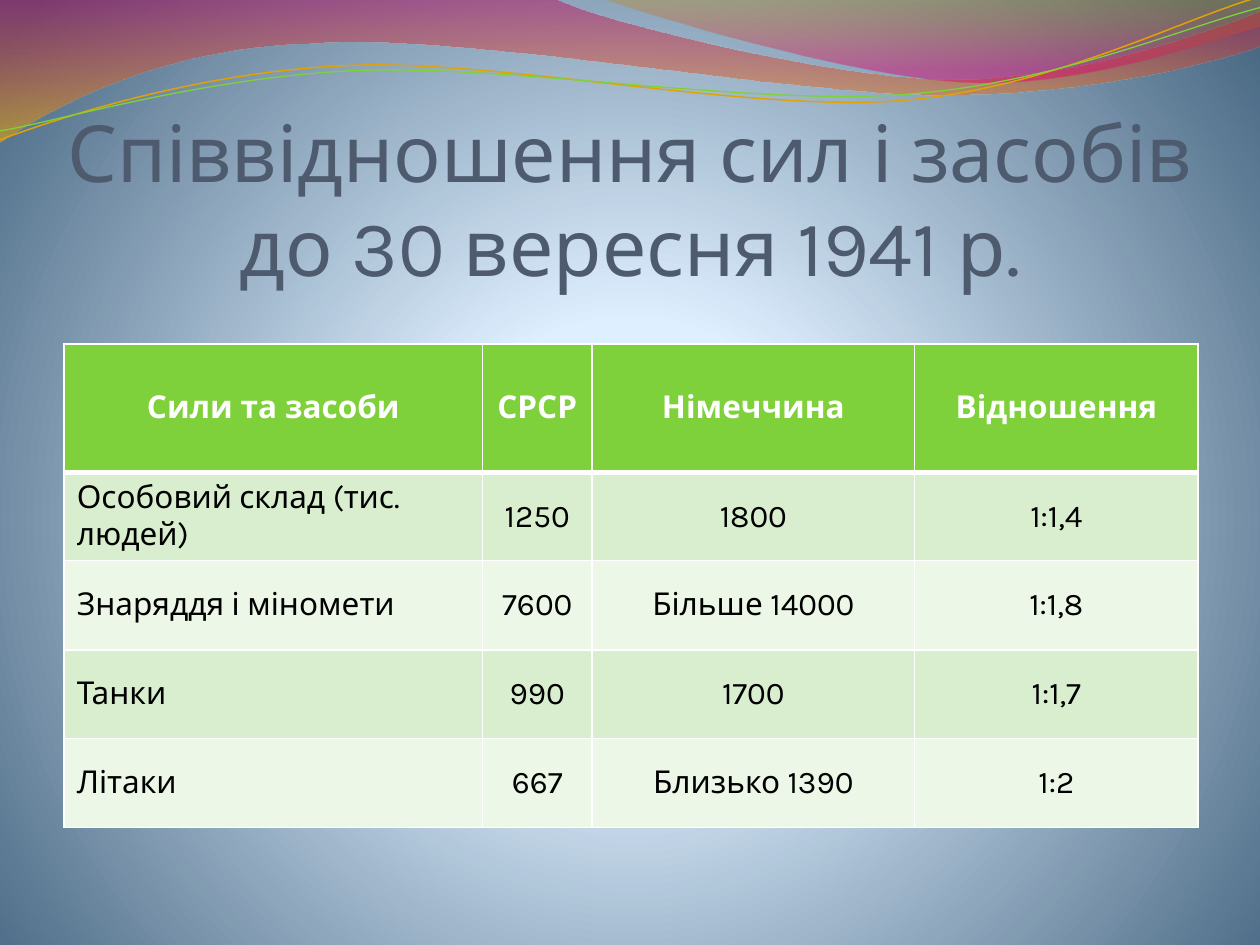
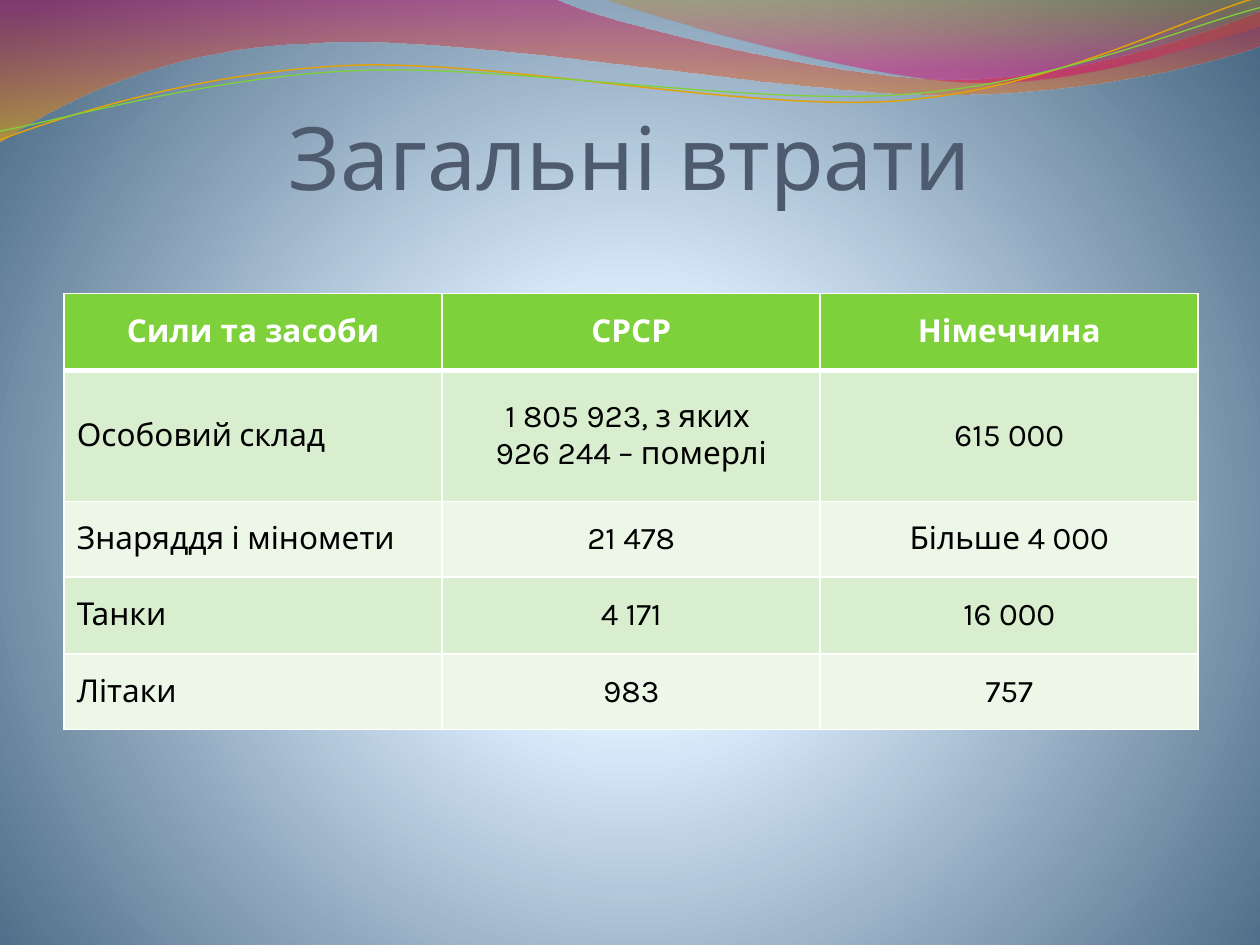
import math

from lxml import etree
from pptx import Presentation
from pptx import util as u
from pptx.dml.color import RGBColor
from pptx.enum import text
from pptx.oxml import ns

FONT = "Karla"
COLORS = {
    "title": "4E5B6F", "header": "7FD13B", "odd row": "D8EECE", "even row": "ECF7E8",
    "white": "FFFFFF", "black": "000000", "gold": "E0A209",
}
# Gradient stops: position %, colour, opacity %
BACKDROP = [(0, "DFF0FF", 100), (25, "DEEFFF", 100), (100, "4A6984", 100)]
RADIAL = {"l": 10, "t": 110, "r": 10, "b": 100}

# Each outline is a start point, then steps: 2 numbers for a line, 6 for a cubic curve.
# Boxes are left, top, width, height.
RIBBONS = [
    ([(0, "BD0059", 45), (100, "F0AB00", 55)], (-0.01, -0.01, 10.02, 1.14),
     [(0, 0), (4.4, -0.01), (4.76, 0.17, 6.64, 0.63, 7.58, 0.63),
      (8.53, 0.63, 9.58, 0.26, 10, 0.09), (10.01, 0.36),
      (9.83, 0.44, 8.7, 0.76, 7.46, 0.75), (6.22, 0.75, 3.82, 0.28, 2.57, 0.34),
      (1.29, 0.36, 0.46, 0.83, -0.01, 1.13), (0, 0)]),
    ([(0, "C38B00", 30), (80, "E1006B", 45)], (4.79, -0.01, 5.21, 0.7),
     [(4.79, -0.01), (5.09, 0.11, 6.82, 0.62, 7.69, 0.65),
      (8.56, 0.69, 9.61, 0.32, 10, 0.21), (10, 0), (4.79, -0.01)]),
]
STRAND_TILT = 357.3
STRANDS = [
    ("gold", 0.85, (-0.02, 0.22, 10.02, 0.71),
     [(0, 1.11), (0.48, 0.93, 1.58, 0.57, 2.77, 0.52), (3.95, 0.47, 5.93, 0.89, 7.13, 0.8),
      (8.33, 0.71, 9.38, 0.15, 9.98, -0.02)]),
    ("header", 0.75, (-0.02, 0.3, 10.03, 0.58),
     [(0, 1.04), (0.47, 0.96, 1.64, 0.61, 2.83, 0.56), (4.03, 0.51, 5.97, 0.84, 7.17, 0.75),
      (8.36, 0.67, 9.41, 0.21, 10, 0.06)]),
]
SLIDES = [
    {"title": "Співвідношення сил і засобів до 30 вересня 1941 р.",
     "size": 45, "title height": 1.41, "table top": 2.73,
     "columns": [3.32, 0.87, 2.56, 2.25], "heights": [1.02, 0.7, 0.71, 0.7, 0.71],
     "rows": [
         ("Сили та засоби", "СРСР", "Німеччина", "Відношення"),
         ("Особовий склад (тис. людей)", "1250", "1800", "1:1,4"),
         ("Знаряддя і міномети", "7600", "Більше 14000", "1:1,8"),
         ("Танки", "990", "1700", "1:1,7"),
         ("Літаки", "667", "Близько 1390", "1:2")]},
    {"title": "Загальні втрати",
     "size": 50, "title height": 1.25, "table top": 2.33,
     "columns": [3, 3, 3], "heights": [0.61, 1.04, 0.6, 0.61, 0.6],
     "rows": [
         ("Сили та засоби", "СРСР", "Німеччина"),
         ("Особовий склад", "1 805 923, з яких \n926 244 – померлі", "615 000"),
         ("Знаряддя і міномети", "21 478", "Більше 4 000"),
         ("Танки", "4 171", "16 000"),
         ("Літаки", "983", "757")]},
]


def rgb(name):
    return RGBColor.from_string(COLORS[name])


def add_element(parent, tag, **attributes):
    values = {key: str(value) for key, value in attributes.items()}
    return etree.SubElement(parent, ns.qn(tag), values)


def set_gradient(fill, owner, stops, center=None):
    """Fill with a top-to-bottom gradient, or a radial one around center."""
    fill.solid()
    solid = owner.find(".//" + ns.qn("a:solidFill"))
    gradient = etree.Element(ns.qn("a:gradFill"), rotWithShape="1")
    stop_list = add_element(gradient, "a:gsLst")
    for position, color, opacity in stops:
        stop = add_element(stop_list, "a:gs", pos=position * 1000)
        shade = add_element(stop, "a:srgbClr", val=color)
        if opacity < 100:
            add_element(shade, "a:alpha", val=opacity * 1000)
    if center:
        radial = add_element(gradient, "a:path", path="circle")
        add_element(radial, "a:fillToRect", **{side: v * 1000 for side, v in center.items()})
    else:
        add_element(gradient, "a:lin", ang=90 * 60000, scaled=1)
    solid.getparent().replace(solid, gradient)


def place_in_box(x, y, box, tilt):
    """Turn a slide point into a point of the box before it is tilted."""
    left, top, width, height = box
    angle = math.radians(-tilt)
    dx, dy = x - left - width / 2, y - top - height / 2
    return (u.Inches(width / 2 + dx * math.cos(angle) - dy * math.sin(angle)),
            u.Inches(height / 2 + dx * math.sin(angle) + dy * math.cos(angle)))


def add_outline(slide, layout, box, outline, tilt=0):
    """Draw a curved freeform and hand it to the layout, so that every slide shows it."""
    steps = [[place_in_box(*step[i:i + 2], box, tilt) for i in range(0, len(step), 2)]
             for step in outline]
    builder = slide.shapes.build_freeform(*steps[0][0])
    builder.add_line_segments([step[-1] for step in steps[1:]],
                              close=outline[0] == outline[-1])
    shape = builder.convert_to_shape()
    shape.shadow.inherit = False
    shape.left, shape.top, shape.width, shape.height = map(u.Inches, box)
    shape.rotation = tilt

    route = shape.element.find(".//" + ns.qn("a:path"))
    route.set("w", str(shape.width))
    route.set("h", str(shape.height))
    for segment, points in zip(list(route), steps):
        if len(points) == 3:
            curve = etree.Element(ns.qn("a:cubicBezTo"))
            route.replace(segment, curve)
            segment = curve
        for point in list(segment):
            segment.remove(point)
        for x, y in points:
            add_element(segment, "a:pt", x=int(x), y=int(y))
    layout.shapes.element.append(shape.element)
    return shape


def add_waves(slide, layout):
    for stops, box, outline in RIBBONS:
        ribbon = add_outline(slide, layout, box, outline)
        ribbon.line.fill.background()
        set_gradient(ribbon.fill, ribbon.element, stops)
    for color, width, box, outline in STRANDS:
        strand = add_outline(slide, layout, box, outline, STRAND_TILT)
        strand.fill.background()
        strand.line.color.rgb = rgb(color)
        strand.line.width = u.Pt(width)


def set_title(slide, content):
    box = slide.shapes.title
    box.left, box.top = u.Inches(0.5), u.Inches(0.77)
    box.width, box.height = u.Inches(9), u.Inches(content["title height"])
    frame = box.text_frame
    frame.text = content["title"]
    frame.auto_size = text.MSO_AUTO_SIZE.NONE
    frame.vertical_anchor = text.MSO_ANCHOR.TOP
    frame.margin_left = frame.margin_right = frame.margin_bottom = 0
    frame.margin_top = u.Inches(0.05)
    para = frame.paragraphs[0]
    para.alignment = text.PP_ALIGN.CENTER
    para.font.name, para.font.size = FONT, u.Pt(content["size"])
    para.font.color.rgb = rgb("title")


def set_borders(cell, row):
    thick = {0: "B", 1: "T"}.get(row)
    properties = cell._tc.get_or_add_tcPr()
    for side in "LRTB":
        width = u.Pt(3 if side == thick else 1)
        line = add_element(properties, "a:ln" + side, w=width)
        add_element(add_element(line, "a:solidFill"), "a:srgbClr", val=COLORS["white"])


def fill_cell(cell, words, row, column):
    set_borders(cell, row)
    cell.fill.solid()
    cell.fill.fore_color.rgb = rgb("header" if row == 0 else "odd row" if row % 2 else "even row")
    cell.vertical_anchor = text.MSO_ANCHOR.MIDDLE
    cell.text_frame.text = words
    for para in cell.text_frame.paragraphs:
        centred = row == 0 or column > 0
        para.alignment = text.PP_ALIGN.CENTER if centred else text.PP_ALIGN.LEFT
        para.font.name, para.font.size = FONT, u.Pt(18)
        para.font.bold = row == 0
        para.font.color.rgb = rgb("white" if row == 0 else "black")


def add_forces_table(slide, content):
    rows, columns, heights = content["rows"], content["columns"], content["heights"]
    table = slide.shapes.add_table(
        len(rows), len(columns), u.Inches(0.51), u.Inches(content["table top"]),
        u.Inches(sum(columns)), u.Inches(sum(heights))).table
    for column, width in zip(table.columns, columns):
        column.width = u.Inches(width)
    for row, height in zip(table.rows, heights):
        row.height = u.Inches(height)
    for r, row in enumerate(rows):
        for c, words in enumerate(row):
            fill_cell(table.cell(r, c), words, r, c)


def main():
    deck = Presentation()
    deck.slide_width, deck.slide_height = u.Inches(10), u.Inches(7.5)
    master = deck.slide_master
    set_gradient(master.background.fill, master.element, BACKDROP, RADIAL)
    layout = deck.slide_layouts.get_by_name("Title Only")
    for content in SLIDES:
        slide = deck.slides.add_slide(layout)
        set_title(slide, content)
        add_forces_table(slide, content)
    add_waves(slide, layout)
    deck.save("out.pptx")


if __name__ == "__main__":
    main()
